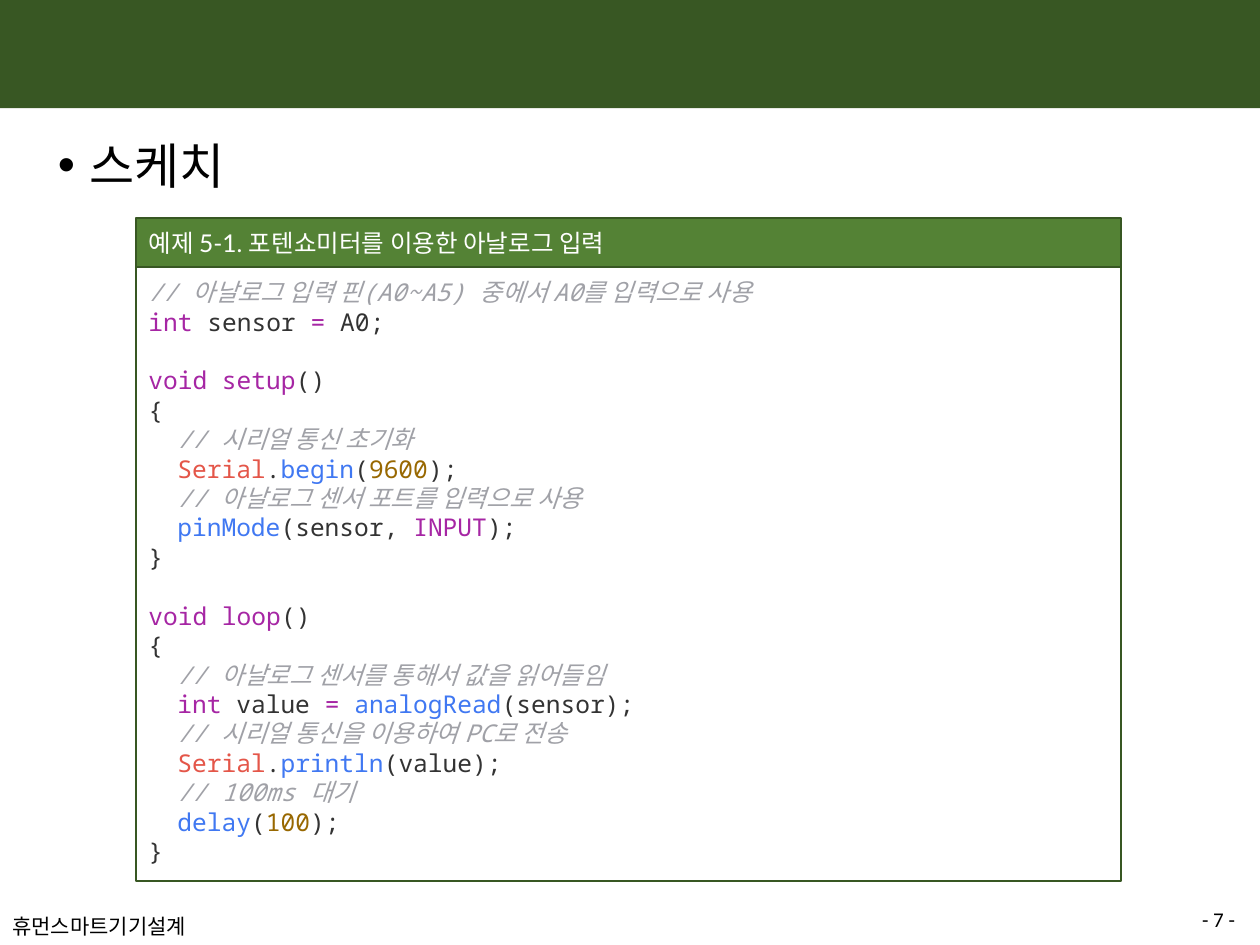
from lxml.etree import SubElement
from pptx import Presentation
from pptx.dml.color import RGBColor
from pptx.enum.shapes import MSO_SHAPE as Shape
from pptx.enum.text import MSO_ANCHOR as Anchor, PP_ALIGN as Align
from pptx.oxml.ns import qn
from pptx.util import Inches, Pt

# Content
TOPIC = "스케치"
COURSE = "휴먼스마트기기설계"
PAGE_LABEL = "- 7 -"
EXAMPLE = "예제 5-1. 포텐쇼미터를 이용한 아날로그 입력"

# Each line of code: indent level, blank lines above, (kind, text) spans
CODE = [
    (0, 0, [("comment", "// 아날로그 입력 핀(A0~A5) 중에서 A0를 입력으로 사용")]),
    (0, 0, [("keyword", "int "), ("plain", "sensor "), ("keyword", "= "), ("plain", "A0;")]),
    (0, 1, [("keyword", "void setup"), ("plain", "()")]),
    (0, 0, [("plain", "{")]),
    (1, 0, [("comment", "// 시리얼 통신 초기화")]),
    (1, 0, [("object", "Serial"), ("plain", "."), ("function", "begin"),
            ("plain", "("), ("number", "9600"), ("plain", ");")]),
    (1, 0, [("comment", "// 아날로그 센서 포트를 입력으로 사용")]),
    (1, 0, [("function", "pinMode"), ("plain", "(sensor, "),
            ("keyword", "INPUT"), ("plain", ");")]),
    (0, 0, [("plain", "}")]),
    (0, 1, [("keyword", "void loop"), ("plain", "()")]),
    (0, 0, [("plain", "{")]),
    (1, 0, [("comment", "// 아날로그 센서를 통해서 값을 읽어들임")]),
    (1, 0, [("keyword", "int "), ("plain", "value "), ("keyword", "= "),
            ("function", "analogRead"), ("plain", "(sensor);")]),
    (1, 0, [("comment", "// 시리얼 통신을 이용하여 PC로 전송")]),
    (1, 0, [("object", "Serial"), ("plain", "."), ("function", "println"),
            ("plain", "(value);")]),
    (1, 0, [("comment", "// 100ms 대기")]),
    (1, 0, [("function", "delay"), ("plain", "("), ("number", "100"), ("plain", ");")]),
    (0, 0, [("plain", "}")]),
]

# Style
SYNTAX = {"comment": "A0A1A7", "keyword": "A626A4", "plain": "333333",
          "object": "E45649", "function": "4078F2", "number": "986801"}
DARK_GREEN, GREEN, WHITE, BLACK = "385723", "548235", "FFFFFF", "000000"
HARD_SPACE = chr(160)  # keeps code spacing fixed
CODE_LEFT, CODE_WIDTH = 1.08, 7.82
HEAD_TOP, HEAD_HEIGHT, CODE_HEIGHT = 1.73, 0.39, 4.87
CODE_INDENT, CODE_LINE = 0.23, 16.8  # inches, points


def color(value):
    return RGBColor.from_string(value)


def add_span(para, text, size, font, ink, italic=False):
    span = para.add_run()
    span.text = text
    span.font.size = Pt(size)
    span.font.name = font
    span.font.color.rgb = color(ink)
    span.font.italic = italic


def add_panel(page, left, top, width, height, fill, line=None):
    panel = page.shapes.add_shape(Shape.RECTANGLE, Inches(left), Inches(top),
                                  Inches(width), Inches(height))
    panel.shadow.inherit = False
    panel.fill.solid()
    panel.fill.fore_color.rgb = color(fill)
    if line:
        panel.line.color.rgb = color(line)
        panel.line.width = Pt(1)
    else:
        panel.line.fill.background()
    frame = panel.text_frame
    frame.word_wrap = True
    frame.margin_left = frame.margin_right = Inches(0.1)
    frame.margin_top = frame.margin_bottom = Inches(0.08)
    frame.paragraphs[0].alignment = Align.LEFT
    return panel


def add_label(page, left, top, width, height, text, font, wrap, align, anchor):
    box = page.shapes.add_textbox(Inches(left), Inches(top), Inches(width), Inches(height))
    box.text_frame.word_wrap = wrap
    box.text_frame.vertical_anchor = anchor
    para = box.text_frame.paragraphs[0]
    para.alignment = align
    add_span(para, text, 12, font, BLACK)


deck = Presentation()
deck.slide_width, deck.slide_height = Inches(10), Inches(7.5)
page = deck.slides.add_slide(deck.slide_layouts[1])

# The band carries no title
title = page.shapes.title
title.element.getparent().remove(title.element)
add_panel(page, 0, 0, 10, 0.86, DARK_GREEN)

# Footer
add_label(page, 0, 7.2, 1.59, 0.3, COURSE, "Lato", False, Align.LEFT, Anchor.TOP)
add_label(page, 8.9, 7.15, 1, 0.29, PAGE_LABEL, "Calibri", True, Align.RIGHT, Anchor.MIDDLE)

# Topic bullet
body = page.placeholders[1]
body.left, body.top, body.width, body.height = map(Inches, (0.36, 0.98, 9.3, 6.07))
para = body.text_frame.paragraphs[0]
para.line_spacing = 1.1
para.space_before = Pt(10)
props = para._p.get_or_add_pPr()
props.set("marL", str(Inches(0.25)))
props.set("indent", str(-Inches(0.25)))
SubElement(props, qn("a:buFont")).set("typeface", "Arial")
SubElement(props, qn("a:buChar")).set("char", "•")
add_span(para, TOPIC, 28, "Lato", BLACK)

# Code listing
listing = add_panel(page, CODE_LEFT, HEAD_TOP + HEAD_HEIGHT, CODE_WIDTH, CODE_HEIGHT,
                    WHITE, DARK_GREEN)
frame = listing.text_frame
frame.vertical_anchor = Anchor.TOP
for number, (level, blanks, spans) in enumerate(CODE):
    para = frame.add_paragraph() if number else frame.paragraphs[0]
    para.alignment = Align.LEFT
    para.space_before = Pt(blanks * CODE_LINE)
    para._p.get_or_add_pPr().set("marL", str(Inches(level * CODE_INDENT)))
    for kind, text in spans:
        add_span(para, text.replace(" ", HARD_SPACE), 14, "Noto Sans Mono",
                 SYNTAX[kind], kind == "comment")

# Listing header
header = add_panel(page, CODE_LEFT, HEAD_TOP, CODE_WIDTH, HEAD_HEIGHT, GREEN, DARK_GREEN)
header.text_frame.vertical_anchor = Anchor.MIDDLE
add_span(header.text_frame.paragraphs[0], EXAMPLE, 14, "Lato", WHITE)

deck.save("out.pptx")
